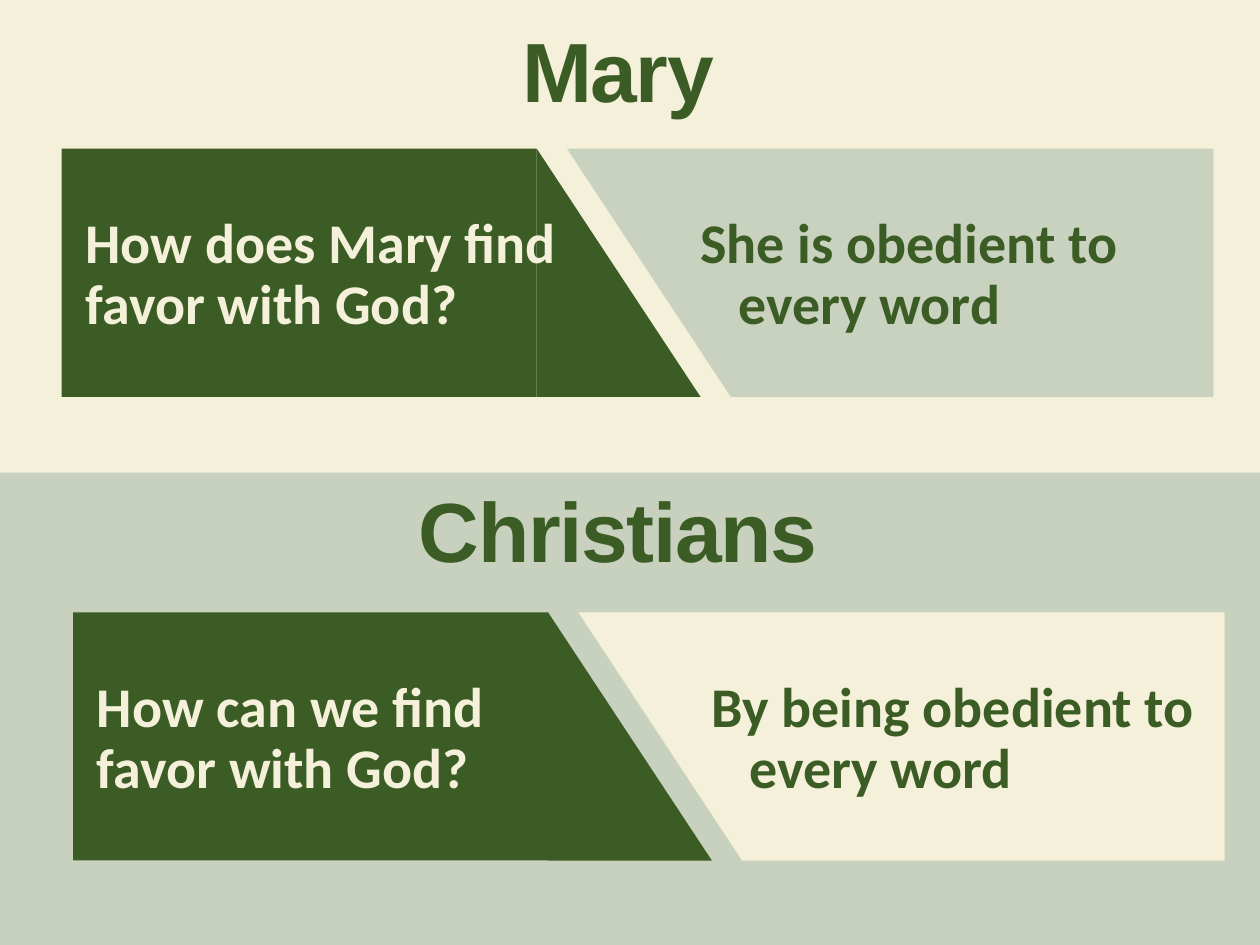
import pptx
import pptx.dml.color
import pptx.enum.shapes
import pptx.enum.text
import pptx.oxml
import pptx.oxml.ns
import pptx.util
from pptx.util import Inches

RGBColor = pptx.dml.color.RGBColor
CREAM = RGBColor(0xF4, 0xF0, 0xD9)
FOREST = RGBColor(0x3C, 0x5C, 0x26)
SAGE = RGBColor(0xC9, 0xD2, 0xBE)
TEAL = RGBColor(0x63, 0x8C, 0x80)

Preset = pptx.enum.shapes.MSO_SHAPE
BANNER_HEIGHT = 1.97
SLANT_WIDTH = 1.3
TEXT_HEIGHT = 1.12
TEXT_DROP = 0.42


def add_block(shapes, preset, left, top, width, height, color, rotation=0):
    block = shapes.add_shape(
        preset, Inches(left), Inches(top), Inches(width), Inches(height))
    block.shadow.inherit = False
    block.fill.solid()
    block.fill.fore_color.rgb = color
    block.line.fill.background()
    block.rotation = rotation
    return block


def add_lower_half(slide):
    lower_half = add_block(slide.shapes, Preset.RECTANGLE, 0, 3.75, 10, 3.75, TEAL)
    tint = lower_half.fill._xPr.find(".//" + pptx.oxml.ns.qn("a:srgbClr"))
    alpha = pptx.oxml.parse_xml(
        "<a:alpha %s val='30000'/>" % pptx.oxml.ns.nsdecls("a"))
    tint.append(alpha)


def add_slanted_panel(slide, slant_left, panel_left, top, width, color, rotation=0):
    panel = slide.shapes.add_group_shape()
    slant = add_block(panel.shapes, Preset.ISOSCELES_TRIANGLE, slant_left, top,
                      SLANT_WIDTH, BANNER_HEIGHT, color, rotation)
    slant.adjustments[0] = 0
    add_block(panel.shapes, Preset.RECTANGLE, panel_left, top,
              width, BANNER_HEIGHT, color, rotation)
    return panel


def add_text(shapes, left, top, width, height, lines, font_name, size, color):
    box = shapes.add_textbox(
        Inches(left), Inches(top), Inches(width), Inches(height))
    frame = box.text_frame
    frame.word_wrap = True
    frame.text = "\n".join(lines)
    for paragraph in frame.paragraphs:
        paragraph.line_spacing = 0.9
        for run in paragraph.runs:
            run.font.name = font_name
            run.font.size = pptx.util.Pt(size)
            run.font.bold = True
            run.font.color.rgb = color
    return frame


def add_heading(slide, top, heading):
    frame = add_text(slide.shapes, 2.92, top, 3.97, 0.73, [heading],
                     "Arial", 48, FOREST)
    frame.margin_left = frame.margin_right = 0
    frame.margin_top = frame.margin_bottom = 0
    frame.auto_size = pptx.enum.text.MSO_AUTO_SIZE.SHAPE_TO_FIT_TEXT
    title = frame.paragraphs[0]
    title.alignment = pptx.enum.text.PP_ALIGN.CENTER
    title.runs[0].font._element.set("spc", "-80")


def add_banner_text(shapes, left, top, width, lines, color):
    frame = add_text(shapes, left, top + TEXT_DROP, width, TEXT_HEIGHT, lines,
                     "Calibri", 32, color)
    frame.vertical_anchor = pptx.enum.text.MSO_ANCHOR.BOTTOM
    return frame


def add_banner(slide, left, top, question, answer, answer_color):
    question_panel = add_slanted_panel(
        slide, left + 3.77, left, top, 3.77, FOREST)
    question_frame = add_banner_text(
        question_panel.shapes, left + 0.09, top, 4.45, [question], CREAM)
    question_frame.paragraphs[0].space_after = pptx.util.Pt(6)

    add_slanted_panel(
        slide, left + 4.01, left + 5.31, top, 3.83, answer_color, 180)
    answer_frame = add_banner_text(
        slide.shapes, left + 4.97, top, 4.13, answer, FOREST)
    second_line = answer_frame.paragraphs[1]
    second_line._p.get_or_add_pPr().set("marL", str(Inches(0.3)))


def main():
    presentation = pptx.Presentation()
    presentation.slide_width = Inches(10)
    presentation.slide_height = Inches(7.5)
    slide = presentation.slides.add_slide(presentation.slide_layouts[6])
    slide.background.fill.solid()
    slide.background.fill.fore_color.rgb = CREAM

    add_lower_half(slide)
    add_heading(slide, 0.24, "Mary")
    add_banner(slide, 0.49, 1.18, "How does Mary find favor with God?",
               ["She is obedient to", "every word"], SAGE)
    add_heading(slide, 3.89, "Christians")
    add_banner(slide, 0.58, 4.86, "How can we find \vfavor with God?",
               ["By being obedient to", "every word"], CREAM)
    presentation.save("out.pptx")


if __name__ == "__main__":
    main()
